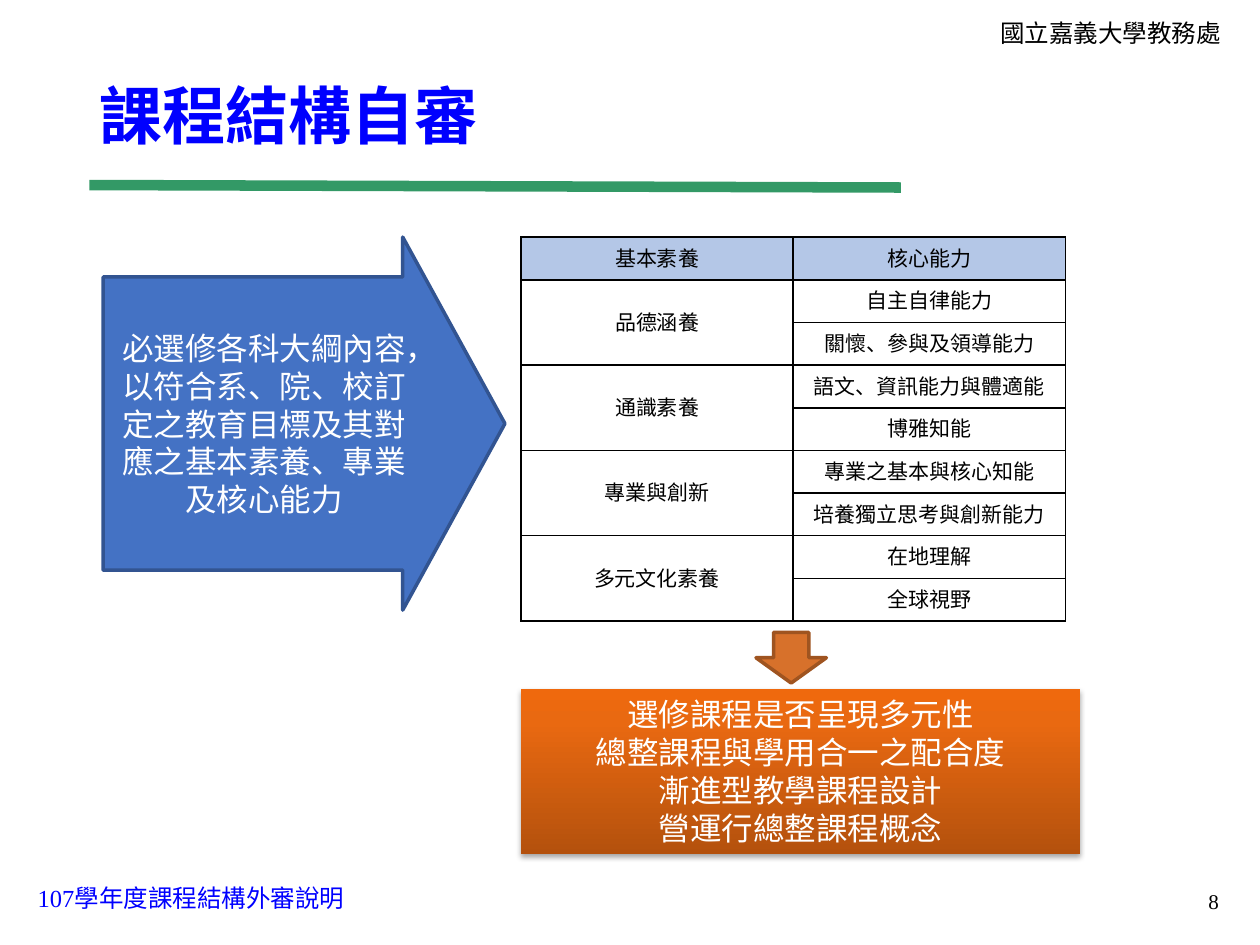
from copy import deepcopy
from dataclasses import dataclass
from typing import Optional

from lxml.etree import SubElement
from pptx import Presentation
from pptx.dml.color import RGBColor
from pptx.enum.shapes import MSO_CONNECTOR, MSO_SHAPE
from pptx.enum.text import MSO_ANCHOR, PP_ALIGN
from pptx.oxml.ns import qn
from pptx.util import Cm, Pt

BLACK = RGBColor(0x00, 0x00, 0x00)
WHITE = RGBColor(0xFF, 0xFF, 0xFF)
BLUE = RGBColor(0x00, 0x00, 0xFF)
GREEN = RGBColor(0x33, 0x99, 0x66)
HEADER_FILL = RGBColor(0xB4, 0xC7, 0xE7)
ARROW_BLUE = RGBColor(0x44, 0x72, 0xC4)
ARROW_BLUE_LINE = RGBColor(0x32, 0x54, 0x91)
ARROW_ORANGE = RGBColor(0xD7, 0x71, 0x2B)
ARROW_ORANGE_LINE = RGBColor(0x9F, 0x54, 0x20)
GRADIENT = (
    (0, RGBColor(0xB4, 0x51, 0x0D)),
    (0.8, RGBColor(0xE9, 0x69, 0x11)),
    (1, RGBColor(0xEF, 0x69, 0x0D)),
)
SERIF = "Times New Roman"
SANS = "Noto Sans CJK SC"
TABLE_FONT = "Arial"
HEADINGS = ("基本素養", "核心能力")
LITERACIES = (
    ("品德涵養", ("自主自律能力", "關懷、參與及領導能力")),
    ("通識素養", ("語文、資訊能力與體適能", "博雅知能")),
    ("專業與創新", ("專業之基本與核心知能", "培養獨立思考與創新能力")),
    ("多元文化素養", ("在地理解", "全球視野")),
)
REVIEW_POINTS = (
    "選修課程是否呈現多元性",
    "總整課程與學用合一之配合度",
    "漸進型教學課程設計",
    "營運行總整課程概念",
)


@dataclass(frozen=True)
class Box:
    left: float
    top: float
    width: float
    height: float

    def lengths(self) -> tuple:
        return tuple(Cm(value) for value in (self.left, self.top, self.width, self.height))


@dataclass(frozen=True)
class Style:
    size: int
    color: RGBColor
    font: str = SERIF
    bold: bool = False
    align: PP_ALIGN = PP_ALIGN.LEFT
    spacing: Optional[float] = None


@dataclass(frozen=True)
class Label:
    box: Box
    text: str
    style: Style
    anchor: MSO_ANCHOR = MSO_ANCHOR.TOP


@dataclass(frozen=True)
class Arrow:
    kind: MSO_SHAPE
    box: Box
    fill: RGBColor
    line: RGBColor
    adjustments: tuple = ()


LABELS = (
    Label(Box(0.51, 17.68, 6.76, 0.86), "107學年度課程結構外審說明", Style(14, BLUE)),
    Label(Box(19.91, 0.23, 5.38, 0.84), "國立嘉義大學教務處", Style(14, BLACK)),
    Label(Box(19.1, 17.65, 5.72, 1.02), "8", Style(12, BLACK, align=PP_ALIGN.RIGHT), MSO_ANCHOR.MIDDLE),
    Label(Box(1.75, 1.04, 21.89, 2.72), "課程結構自審", Style(36, BLUE, bold=True, spacing=0.9), MSO_ANCHOR.MIDDLE),
)
GOAL_ARROW = Arrow(MSO_SHAPE.RIGHT_ARROW, Box(2.08, 4.78, 8.1, 7.52), ARROW_BLUE, ARROW_BLUE_LINE, (0.786, 0.274))
REVIEW_ARROW = Arrow(MSO_SHAPE.DOWN_ARROW, Box(15.24, 12.75, 1.42, 1.02), ARROW_ORANGE, ARROW_ORANGE_LINE)
GOAL_TEXT = "必選修各科大綱內容，以符合系、院、校訂定之教育目標及其對應之基本素養、專業及核心能力"


def write_text(text_frame, lines: tuple, style: Style, anchor: MSO_ANCHOR) -> None:
    """Fill a text frame with one styled paragraph per line."""
    text_frame.word_wrap = True
    text_frame.vertical_anchor = anchor
    for index, line in enumerate(lines):
        paragraph = text_frame.add_paragraph() if index else text_frame.paragraphs[0]
        paragraph.alignment = style.align
        if style.spacing is not None:
            paragraph.line_spacing = style.spacing
        run = paragraph.add_run()
        run.text = line
        run.font.name = style.font
        run.font.size = Pt(style.size)
        run.font.bold = style.bold
        run.font.color.rgb = style.color


def add_label(slide, label: Label) -> None:
    """Add a text box."""
    shape = slide.shapes.add_textbox(*label.box.lengths())
    write_text(shape.text_frame, (label.text,), label.style, label.anchor)


def add_title_rule(slide) -> None:
    """Add the green line below the title."""
    rule = slide.shapes.add_connector(MSO_CONNECTOR.STRAIGHT, Cm(1.8), Cm(3.73), Cm(18.16), Cm(3.78))
    rule.line.color.rgb = GREEN
    rule.line.width = Pt(6)
    SubElement(rule._element.spPr, qn("a:effectLst"))


def add_arrow(slide, arrow: Arrow):
    """Add a filled block arrow and return it."""
    shape = slide.shapes.add_shape(arrow.kind, *arrow.box.lengths())
    for index, value in enumerate(arrow.adjustments):
        shape.adjustments[index] = value
    shape.shadow.inherit = False
    shape.fill.solid()
    shape.fill.fore_color.rgb = arrow.fill
    shape.line.color.rgb = arrow.line
    shape.line.width = Pt(2)
    return shape


def style_cell(cell, text: str, fill: Optional[RGBColor] = None) -> None:
    """Set the borders, fill and text of a table cell."""
    properties = cell._tc.get_or_add_tcPr()
    for side in ("lnL", "lnR", "lnT", "lnB"):
        border = SubElement(properties, qn(f"a:{side}"), w=str(Pt(1)))
        solid = SubElement(border, qn("a:solidFill"))
        SubElement(solid, qn("a:srgbClr"), val=str(BLACK))
    if fill is None:
        cell.fill.background()
    else:
        cell.fill.solid()
        cell.fill.fore_color.rgb = fill
    cell.vertical_anchor = MSO_ANCHOR.MIDDLE
    if text:
        style = Style(12, BLACK, TABLE_FONT, align=PP_ALIGN.CENTER, spacing=Pt(16))
        write_text(cell.text_frame, (text,), style, MSO_ANCHOR.MIDDLE)


def add_literacy_table(slide) -> None:
    """Add the table of literacies and their core abilities."""
    row_count = 1 + sum(len(abilities) for _, abilities in LITERACIES)
    box = Box(10.5, 4.78, 10.98, 0.86 * row_count)
    table = slide.shapes.add_table(row_count, len(HEADINGS), *box.lengths()).table
    for column, heading in enumerate(HEADINGS):
        style_cell(table.cell(0, column), heading, HEADER_FILL)
    row = 1
    for literacy, abilities in LITERACIES:
        for offset, ability in enumerate(abilities):
            style_cell(table.cell(row + offset, 0), "" if offset else literacy)
            style_cell(table.cell(row + offset, 1), ability)
        table.cell(row, 0).merge(table.cell(row + len(abilities) - 1, 0))
        row += len(abilities)


def add_review_box(slide) -> None:
    """Add the gradient box with the review points."""
    shape = slide.shapes.add_shape(MSO_SHAPE.RECTANGLE, *Box(10.5, 13.89, 11.28, 3.33).lengths())
    shape.line.fill.background()
    shape.fill.gradient()
    shape.fill.gradient_angle = 90
    stop_list = shape._element.spPr.find(".//" + qn("a:gsLst"))
    stop_list.append(deepcopy(stop_list[0]))
    for stop, (position, color) in zip(shape.fill.gradient_stops, GRADIENT):
        stop.position = position
        stop.color.rgb = color
    shape.shadow.inherit = False
    effects = shape._element.spPr.find(qn("a:effectLst"))
    shadow = SubElement(
        effects, qn("a:outerShdw"), blurRad=str(Pt(3.1)), dist=str(Pt(1.8)), dir="5400000", rotWithShape="0"
    )
    shadow_color = SubElement(shadow, qn("a:srgbClr"), val=str(BLACK))
    SubElement(shadow_color, qn("a:alpha"), val="35000")
    write_text(shape.text_frame, REVIEW_POINTS, Style(18, WHITE, SANS, align=PP_ALIGN.CENTER), MSO_ANCHOR.TOP)


def main() -> None:
    """Build the slide and save it."""
    presentation = Presentation()
    presentation.slide_width, presentation.slide_height = Cm(25.4), Cm(19.05)
    slide = presentation.slides.add_slide(presentation.slide_layouts[6])
    add_title_rule(slide)
    for label in LABELS:
        add_label(slide, label)
    add_literacy_table(slide)
    goal = add_arrow(slide, GOAL_ARROW)
    write_text(goal.text_frame, (GOAL_TEXT,), Style(18, WHITE, align=PP_ALIGN.CENTER), MSO_ANCHOR.MIDDLE)
    add_arrow(slide, REVIEW_ARROW)
    add_review_box(slide)
    presentation.save("out.pptx")


if __name__ == "__main__":
    main()
